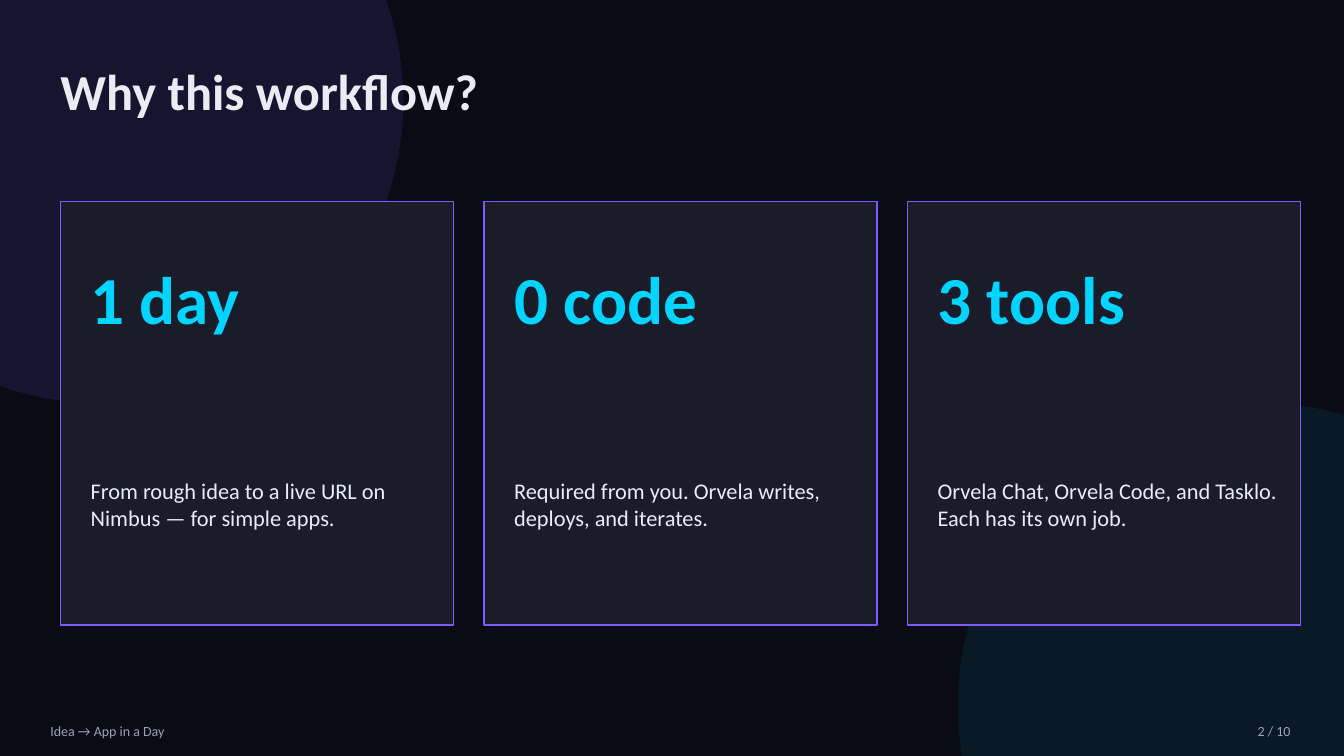
from dataclasses import dataclass

from lxml import etree
from pptx import Presentation
from pptx.dml.color import RGBColor
from pptx.enum import shapes, text
from pptx.oxml import ns
from pptx.util import Inches, Pt


@dataclass(frozen=True)
class Theme:
    font: str = "Calibri"
    background: str = "0A0B14"
    card: str = "1A1D29"
    violet: str = "7C5CFF"
    cyan: str = "00D4FF"
    ink: str = "E8ECF3"
    muted: str = "9AA3B2"
    title: int = 36
    figure: int = 48
    body: int = 16
    footer: int = 10


theme = Theme()


def add_filled(kind, box, color):
    sp = s.shapes.add_shape(kind, *map(Inches, box))
    sp.shadow.inherit = False
    sp.fill.solid()
    sp.fill.fore_color.rgb = RGBColor.from_string(color)
    sp.line.fill.background()
    return sp


def write(sp, box, words, size, color, bold=False, align=text.PP_ALIGN.LEFT):
    """Place a text shape without margins and give it one styled run."""
    sp.left, sp.top, sp.width, sp.height = map(Inches, box)
    tf = sp.text_frame
    tf.word_wrap = True
    tf.auto_size = text.MSO_AUTO_SIZE.NONE
    tf.vertical_anchor = text.MSO_ANCHOR.MIDDLE
    tf.margin_left = tf.margin_top = tf.margin_right = tf.margin_bottom = 0
    p = tf.paragraphs[0]
    p.alignment = align
    r = p.add_run()
    r.text = words
    r.font.name = theme.font
    r.font.size = Pt(size)
    r.font.bold = bold
    r.font.color.rgb = RGBColor.from_string(color)


prs = Presentation()
prs.slide_width, prs.slide_height = Inches(13.33), Inches(7.5)
s = prs.slides.add_slide(prs.slide_layouts[5])
s.background.fill.solid()
s.background.fill.fore_color.rgb = RGBColor.from_string(theme.background)

# Translucent corner glows
for left, top, color, opacity in ((-2, -2, theme.violet, 12), (9.5, 4, theme.cyan, 8)):
    glow = add_filled(shapes.MSO_SHAPE.OVAL, (left, top, 6, 6), color)
    rgb = glow.element.spPr.find(".//" + ns.qn("a:srgbClr"))
    etree.SubElement(rgb, ns.qn("a:alpha"), val=str(opacity * 1000))

# The title placeholder moves in front of the glows
title = s.shapes.title
title.element.getparent().append(title.element)
write(title, (0.6, 0.5, 12, 0.8), "Why this workflow?", theme.title, theme.ink, bold=True)

# Cards
cards = (
    ("1 day", "From rough idea to a live URL on Nimbus — for simple apps."),
    ("0 code", "Required from you. Orvela writes, deploys, and iterates."),
    ("3 tools", "Orvela Chat, Orvela Code, and Tasklo. Each has its own job."),
)
card_width, gap, inset = 3.9, 0.3, 0.3
for i, (figure, caption) in enumerate(cards):
    left = 0.6 + i * (card_width + gap)
    card = add_filled(shapes.MSO_SHAPE.RECTANGLE, (left, 2, card_width, 4.2), theme.card)
    card.line.color.rgb = RGBColor.from_string(theme.violet)
    card.line.width = Pt(1)
    write(s.shapes.add_textbox(0, 0, 0, 0), (left + inset, 2.3, 3.5, 1.3),
          figure, theme.figure, theme.cyan, bold=True)
    write(s.shapes.add_textbox(0, 0, 0, 0), (left + inset, 4, 3.5, 2),
          caption, theme.body, theme.ink)

# Footer
write(s.shapes.add_textbox(0, 0, 0, 0), (0.5, 7.1, 6, 0.3),
      "Idea → App in a Day", theme.footer, theme.muted)
write(s.shapes.add_textbox(0, 0, 0, 0), (12, 7.1, 0.8, 0.3),
      "2 / 10", theme.footer, theme.muted, align=text.PP_ALIGN.RIGHT)

prs.save("out.pptx")
